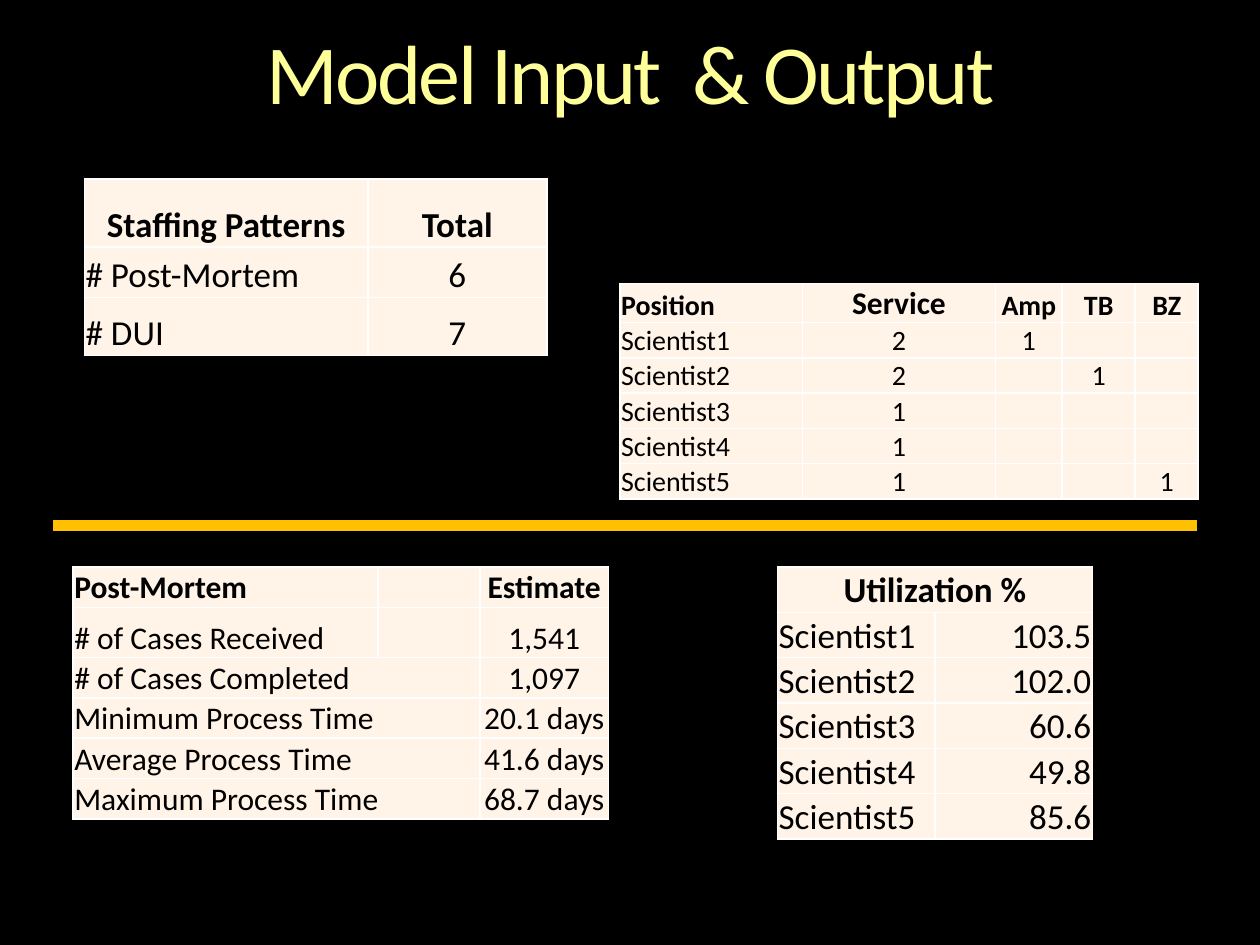
import pptx
import pptx.util
import pptx.dml.color
import pptx.enum.shapes
import pptx.enum.text
import pptx.oxml
import pptx.oxml.ns
from pptx.util import Inches

COLORS = {
    "background": "000000",
    "title": "FFFF99",
    "cell": "FFF4E7",
    "text": "000000",
    "border": "FFFFFF",
    "divider": "FFC000",
}
FONT = "Calibri"
NS = pptx.oxml.ns.nsdecls("a")
ALIGN = {
    "l": pptx.enum.text.PP_ALIGN.LEFT,
    "c": pptx.enum.text.PP_ALIGN.CENTER,
    "r": pptx.enum.text.PP_ALIGN.RIGHT,
}


def add_run(paragraph, text, size, color, bold=False):
    run = paragraph.add_run()
    run.text = text
    run.font.name = FONT
    run.font.size = pptx.util.Pt(size)
    run.font.bold = bold
    run.font.color.rgb = pptx.dml.color.RGBColor.from_string(COLORS[color])
    return run


def add_grid(left, top, widths, heights, rows, size, aligns, merged=(), header_sizes=None):
    """Table with a bold first row; merged lists the rows whose first two cells join."""
    table = slide.shapes.add_table(
        len(rows), len(widths), Inches(left), Inches(top),
        Inches(sum(widths)), Inches(sum(heights))).table
    table.first_row = table.horz_banding = False
    for column, width in zip(table.columns, widths):
        column.width = Inches(width)
    for row, height in zip(table.rows, heights):
        row.height = Inches(height)

    for r, values in enumerate(rows):
        for c, value in enumerate(values):
            cell = table.cell(r, c)
            cell.margin_left = cell.margin_right = cell.margin_top = Inches(0.01)
            cell.margin_bottom = 0
            cell.vertical_anchor = pptx.enum.text.MSO_ANCHOR.BOTTOM
            # Borders come before the fill in the cell properties
            for side in ("lnL", "lnR", "lnT", "lnB"):
                cell._tc.get_or_add_tcPr().append(pptx.oxml.parse_xml(
                    f'<a:{side} {NS} w="12700"><a:solidFill>'
                    f'<a:srgbClr val="{COLORS["border"]}"/></a:solidFill></a:{side}>'))
            cell.fill.solid()
            cell.fill.fore_color.rgb = pptx.dml.color.RGBColor.from_string(COLORS["cell"])

            paragraph = cell.text_frame.paragraphs[0]
            if value:
                paragraph.alignment = ALIGN["c" if r == 0 and c else aligns[c]]
                text_size = header_sizes[c] if header_sizes and r == 0 else size
                add_run(paragraph, value, text_size, "text", bold=r == 0)
            else:
                # Keeps an empty cell from stretching its row
                paragraph._p.append(pptx.oxml.parse_xml(
                    f'<a:endParaRPr {NS} sz="{size * 100}"/>'))
    for r in merged:
        table.cell(r, 0).merge(table.cell(r, 1))
    return table


presentation = pptx.Presentation()
presentation.slide_width = Inches(10)
presentation.slide_height = Inches(7.5)
slide = presentation.slides.add_slide(presentation.slide_layouts[6])
slide.background.fill.solid()
slide.background.fill.fore_color.rgb = pptx.dml.color.RGBColor.from_string(COLORS["background"])

# Title
title = slide.shapes.add_textbox(Inches(0.42), Inches(0.25), Inches(9.17), Inches(0.73)).text_frame
title.word_wrap = True
title.margin_left = title.margin_right = title.margin_top = title.margin_bottom = 0
heading = title.paragraphs[0]
heading.alignment = ALIGN["c"]
heading.line_spacing = 0.9
heading_run = add_run(heading, "Model Input  & Output", 48, "title")
heading_run.font._element.set("spc", "-150")

# Input: staffing patterns
add_grid(0.67, 1.42, [2.25, 1.42], [0.54, 0.4, 0.46], [
    ["Staffing Patterns", "Total"],
    ["# Post-Mortem", "6"],
    ["# DUI", "7"],
], 20, "lc").cell(0, 0).text_frame.paragraphs[0].alignment = ALIGN["c"]

# Input: positions
add_grid(4.92, 2.25, [1.45, 1.53, 0.53, 0.58, 0.5], [0.31] + [0.28] * 5, [
    ["Position", "Service", "Amp", "TB", "BZ"],
    ["Scientist1", "2", "1", "", ""],
    ["Scientist2", "2", "", "1", ""],
    ["Scientist3", "1", "", "", ""],
    ["Scientist4", "1", "", "", ""],
    ["Scientist5", "1", "", "", "1"],
], 16, "lcccc", header_sizes=[16, 18, 16, 16, 16])

# Output: post-mortem estimates
add_grid(0.58, 4.5, [2.42, 0.81, 1.02], [0.32, 0.4] + [0.32] * 4, [
    ["Post-Mortem", "", "Estimate"],
    ["# of Cases Received", "", "1,541"],
    ["# of Cases Completed", "", "1,097"],
    ["Minimum Process Time", "", "20.1 days"],
    ["Average Process Time", "", "41.6 days"],
    ["Maximum Process Time", "", "68.7 days"],
], 18, "lcc", merged=range(2, 6))

# Divider between input and output
divider = slide.shapes.add_connector(
    pptx.enum.shapes.MSO_CONNECTOR.STRAIGHT,
    Inches(0.42), Inches(4.17), Inches(9.5), Inches(4.17))
divider.line.width = pptx.util.Pt(6.5)
divider.line.color.rgb = pptx.dml.color.RGBColor.from_string(COLORS["divider"])
divider._element.spPr.append(pptx.oxml.parse_xml(f"<a:effectLst {NS}/>"))

# Output: utilization
add_grid(6.17, 4.5, [1.25, 1.25], [0.36] * 6, [
    ["Utilization %", ""],
    ["Scientist1", "103.5"],
    ["Scientist2", "102.0"],
    ["Scientist3", "60.6"],
    ["Scientist4", "49.8"],
    ["Scientist5", "85.6"],
], 20, "lr", merged=[0]).cell(0, 0).text_frame.paragraphs[0].alignment = ALIGN["c"]

presentation.save("out.pptx")
